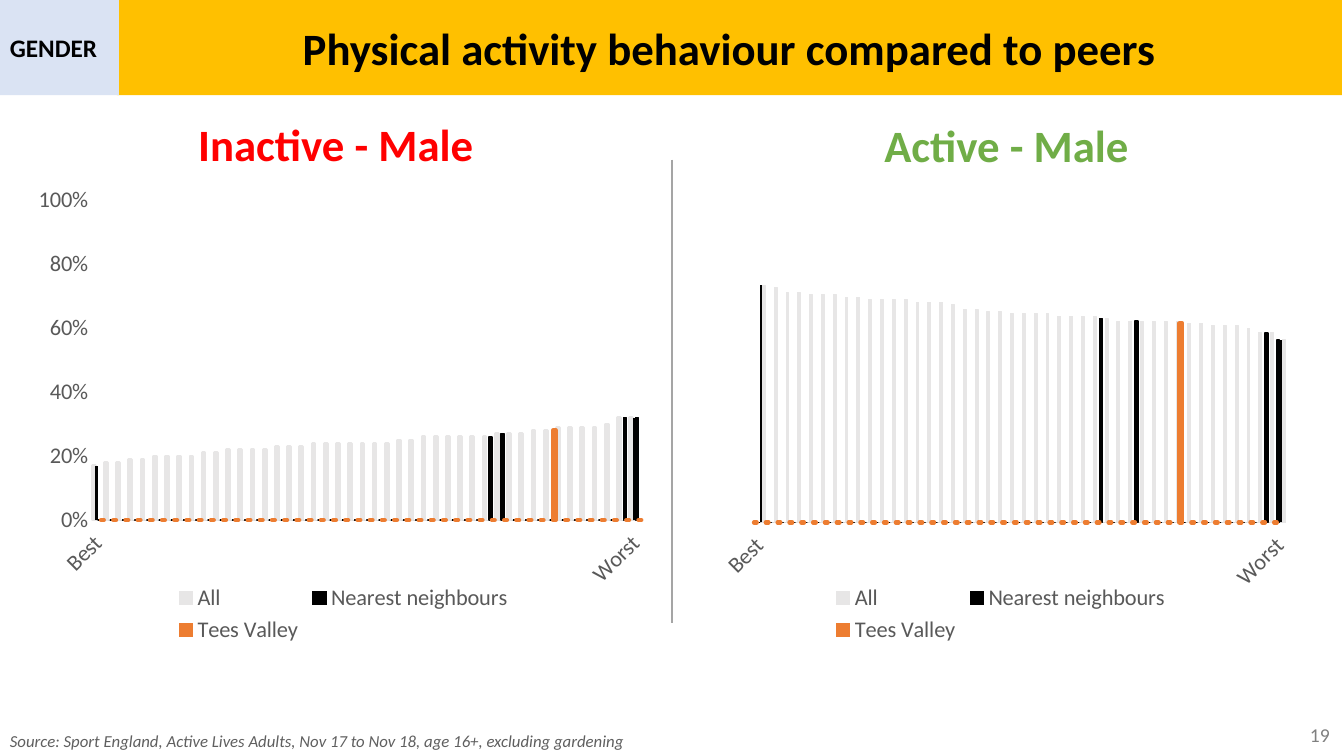
from lxml import etree
from pptx import Presentation
from pptx.chart.data import CategoryChartData
from pptx.dml.color import RGBColor
from pptx.enum.chart import XL_CHART_TYPE as ChartType, XL_LEGEND_POSITION as LegendPos
from pptx.enum.chart import XL_TICK_LABEL_POSITION as LabelPos, XL_TICK_MARK as TickMark
from pptx.enum.shapes import MSO_CONNECTOR as Connector, MSO_SHAPE as Shape
from pptx.enum.text import MSO_ANCHOR as Anchor, PP_ALIGN as Align
from pptx.oxml import parse_xml
from pptx.oxml.ns import nsdecls, qn
from pptx.util import Pt

FONT = "Calibri"
BLACK = RGBColor(0x00, 0x00, 0x00)
RED = RGBColor(0xFF, 0x00, 0x00)
GREEN = RGBColor(0x70, 0xAD, 0x47)
AMBER = RGBColor(0xFF, 0xC0, 0x00)
PALE_BLUE = RGBColor(0xDA, 0xE3, 0xF3)
ORANGE = RGBColor(0xED, 0x7D, 0x31)
PALE_GREY = RGBColor(0xE7, 0xE6, 0xE6)
AXIS_GREY = RGBColor(0xD9, 0xD9, 0xD9)
RULE_GREY = RGBColor(0xA5, 0xA5, 0xA5)
NUMBER_GREY = RGBColor(0x80, 0x80, 0x80)
LABEL_GREY = RGBColor(0x59, 0x59, 0x59)
SOURCE_GREY = RGBColor(0x5F, 0x5F, 0x5F)

AREAS = 45
INACTIVE = [
    0.17, 0.18, 0.18, 0.19, 0.19, 0.2, 0.2, 0.2, 0.2, 0.21, 0.21, 0.22, 0.22, 0.22, 0.22,
    0.23, 0.23, 0.23, 0.24, 0.24, 0.24, 0.24, 0.24, 0.24, 0.24, 0.25, 0.25, 0.26, 0.26, 0.26,
    0.26, 0.26, 0.26, 0.27, 0.27, 0.27, 0.28, 0.28, 0.29, 0.29, 0.29, 0.29, 0.3, 0.32, 0.32]
ACTIVE = [
    77, 80, 80, 82, 83, 83, 83, 84, 84, 85, 85, 85, 85, 85, 85,
    86, 87, 87, 87, 87, 88, 88, 88, 88, 89, 89, 90, 90, 92, 93,
    93, 93, 94, 94, 94, 94, 95, 95, 96, 96, 96, 97, 97, 99, 100]


def set_text(sp, text, size, color, align=Align.LEFT, anchor=Anchor.TOP,
             bold=False, italic=False):
    tf = sp.text_frame
    tf.word_wrap = True
    tf.vertical_anchor = anchor
    p = tf.paragraphs[0]
    p.alignment = align
    r = p.add_run()
    r.text = text
    font = r.font
    font.name, font.size, font.bold, font.italic = FONT, Pt(size), bold, italic
    font.color.rgb = color


def add_text(s, box, *args, **style):
    set_text(s.shapes.add_textbox(*map(Pt, box)), *args, **style)


def add_banner(s, box, fill, *args, **style):
    sp = s.shapes.add_shape(Shape.RECTANGLE, *map(Pt, box))
    sp.shadow.inherit = False
    sp.fill.solid()
    sp.fill.fore_color.rgb = fill
    sp.line.fill.background()
    set_text(sp, *args, anchor=Anchor.MIDDLE, bold=True, **style)


def add_divider(s, x, top, bottom):
    line = s.shapes.add_connector(Connector.STRAIGHT, Pt(x), Pt(top), Pt(x), Pt(bottom))
    line.line.color.rgb = RULE_GREY
    line.line.width = Pt(2)
    etree.SubElement(line._element.spPr, qn("a:effectLst"))


def sparse(points, blank=0):
    return [points.get(i, blank) for i in range(AREAS)]


def style_font(font, color):
    font.name, font.size = FONT, Pt(16)
    font.color.rgb = color


def set_plot_layout(chart, layout):
    """Place the inner plot area, given as fractions of the chart."""
    area = chart._chartSpace.chart.plotArea
    for old in area.findall(qn("c:layout")):
        area.remove(old)
    modes = '<c:xMode val="edge"/><c:yMode val="edge"/>'
    sizes = "".join(f'<c:{tag} val="{v}"/>' for tag, v in zip("xywh", layout))
    area.insert(0, parse_xml(
        f'<c:layout {nsdecls("c")}><c:manualLayout><c:layoutTarget val="inner"/>'
        f'{modes}{sizes}</c:manualLayout></c:layout>'))


def add_rank_chart(s, box, first, last, values, neighbours, tees_index,
                   all_width, top, step, fmt, layout):
    data = CategoryChartData(number_format=fmt)
    data.categories = [first] + [""] * (AREAS - 2) + [last]
    data.add_series("All", values)
    data.add_series("Series 2", sparse({0: values[0], AREAS - 1: values[-1]}, None))
    data.add_series("Nearest neighbours", sparse(neighbours))
    data.add_series("Tees Valley", sparse({tees_index: values[tees_index]}))
    chart = s.shapes.add_chart(ChartType.COLUMN_CLUSTERED, *map(Pt, box), data).chart
    chart.has_title = False
    style_font(chart.font, BLACK)

    # Columns
    plot = chart.plots[0]
    plot.gap_width, plot.overlap, plot.vary_by_categories = 20, 0, False
    looks = [(PALE_GREY, all_width), (BLACK, 0), (BLACK, 1), (ORANGE, 3)]
    for ser, (color, width) in zip(plot.series, looks):
        ser.format.fill.solid()
        ser.format.fill.fore_color.rgb = color
        if width:
            ser.format.line.color.rgb = color
            ser.format.line.width = Pt(width)
        else:
            ser.format.line.fill.background()
    for ln in chart._chartSpace.xpath("c:chart//c:ser/c:spPr/a:ln"):
        etree.SubElement(ln, qn("a:round"))

    # Axes
    cat, val = chart.category_axis, chart.value_axis
    for axis in (cat, val):
        axis.major_tick_mark = axis.minor_tick_mark = TickMark.NONE
        axis.has_major_gridlines = False
        style_font(axis.tick_labels.font, LABEL_GREY)
    cat.tick_label_position = LabelPos.LOW
    cat.format.line.color.rgb = AXIS_GREY
    cat.format.line.width = Pt(0.75)
    cat._element.find(qn("c:txPr")).find(qn("a:bodyPr")).set("rot", "-2700000")
    val.minimum_scale, val.maximum_scale, val.major_unit = 0, top, step
    val.tick_labels.number_format = fmt
    val.tick_labels.number_format_is_linked = False
    val.format.line.fill.background()

    # Legend without the unnamed second series
    chart.has_legend = True
    legend = chart.legend
    legend.position, legend.include_in_layout = LegendPos.BOTTOM, False
    style_font(legend.font, LABEL_GREY)
    legend._element.find(qn("c:legendPos")).addnext(parse_xml(
        f'<c:legendEntry {nsdecls("c")}><c:idx val="1"/><c:delete val="1"/></c:legendEntry>'))
    set_plot_layout(chart, layout)
    return chart


def main():
    prs = Presentation()
    prs.slide_width, prs.slide_height = Pt(960), Pt(540)
    s = prs.slides.add_slide(prs.slide_layouts[6])

    # Header
    add_banner(s, (83.5, 0, 875, 68), AMBER, "Physical activity behaviour compared to peers",
               32, BLACK, align=Align.CENTER)
    add_banner(s, (0, 0, 85, 68), PALE_BLUE, "GENDER", 18, BLACK)

    # Panel headings and divider
    add_text(s, (0, 80, 480, 46), "Inactive - Male", 32, RED, align=Align.CENTER, bold=True)
    add_text(s, (479, 80.5, 480, 46), "Active - Male", 32, GREEN, align=Align.CENTER, bold=True)
    add_divider(s, 480, 114, 445)

    # Charts
    add_rank_chart(s, (18.5, 123, 453.5, 340), "Best", "Worst", INACTIVE,
                   {32: 0.26, 33: 0.27, 43: 0.32, 44: 0.32}, 37,
                   2, 1, 0.2, "0%", (0.104, 0.059, 0.866, 0.672))
    active = add_rank_chart(s, (488, 123, 453.5, 340), "Worst", "Best", ACTIVE,
                            {0: 77, 1: 80, 12: 85, 15: 86}, 8,
                            0.75, 138, 28, "0.0%", (0.111, 0.049, 0.838, 0.687))
    active.category_axis.reverse_order = True
    active.value_axis.visible = False

    # Footer
    add_text(s, (0, 518.5, 718, 22),
             "Source: Sport England, Active Lives Adults, Nov 17 to Nov 18, age 16+, "
             "excluding gardening", 12, SOURCE_GREY, italic=True)
    add_text(s, (741, 510.5, 216, 29), "19", 14, NUMBER_GREY,
             align=Align.RIGHT, anchor=Anchor.MIDDLE)
    prs.save("out.pptx")


if __name__ == "__main__":
    main()
